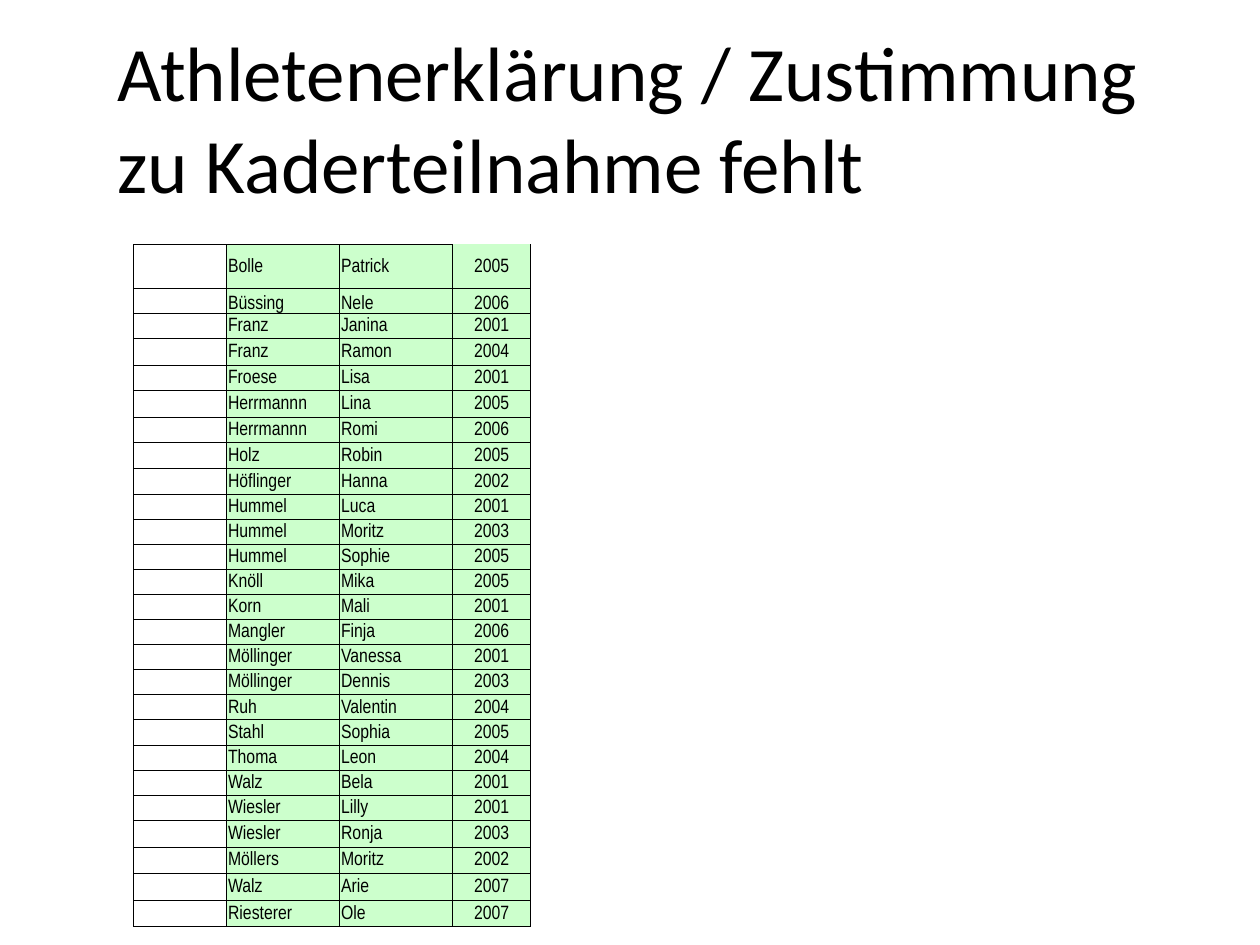
from lxml.etree import SubElement
from pptx import Presentation
from pptx.dml.color import RGBColor
from pptx.enum.text import MSO_ANCHOR, MSO_AUTO_SIZE, PP_ALIGN
from pptx.oxml.ns import qn
from pptx.util import Pt

COLORS = {"text": "000000", "border": "000000", "cell": "CCFFCC"}
ATHLETES = [
    ("Bolle", "Patrick", 2005), ("Büssing", "Nele", 2006),
    ("Franz", "Janina", 2001), ("Franz", "Ramon", 2004),
    ("Froese", "Lisa", 2001), ("Herrmannn", "Lina", 2005),
    ("Herrmannn", "Romi", 2006), ("Holz", "Robin", 2005),
    ("Höflinger", "Hanna", 2002), ("Hummel", "Luca", 2001),
    ("Hummel", "Moritz", 2003), ("Hummel", "Sophie", 2005),
    ("Knöll", "Mika", 2005), ("Korn", "Mali", 2001),
    ("Mangler", "Finja", 2006), ("Möllinger", "Vanessa", 2001),
    ("Möllinger", "Dennis", 2003), ("Ruh", "Valentin", 2004),
    ("Stahl", "Sophia", 2005), ("Thoma", "Leon", 2004),
    ("Walz", "Bela", 2001), ("Wiesler", "Lilly", 2001),
    ("Wiesler", "Ronja", 2003), ("Möllers", "Moritz", 2002),
    ("Walz", "Arie", 2007), ("Riesterer", "Ole", 2007),
]
COL_WIDTHS = [53.2, 64.6, 64.6, 44.5]
TALL_ROWS = {3, 5, 7, 22, 23, 24, 25}
ROW_HEIGHTS = [25.2] + [15.25 if i in TALL_ROWS else 13.4
                        for i in range(1, len(ATHLETES))]


def set_font(p, name, size):
    p.font.name = name
    p.font.size = Pt(size)
    p.font.color.rgb = RGBColor.from_string(COLORS["text"])


def set_borders(cell, hidden=()):
    tcPr = cell._tc.get_or_add_tcPr()
    for i, side in enumerate(("lnL", "lnR", "lnT", "lnB")):
        ln = tcPr.makeelement(qn(f"a:{side}"), {"w": str(Pt(0.5))})
        tcPr.insert(i, ln)
        if side in hidden:
            SubElement(ln, qn("a:noFill"))
        else:
            fill = SubElement(ln, qn("a:solidFill"))
            SubElement(fill, qn("a:srgbClr"), val=COLORS["border"])


prs = Presentation()
prs.slide_width, prs.slide_height = Pt(720), Pt(540)
s = prs.slides.add_slide(prs.slide_layouts[5])

# Title
title = s.shapes.title
title.left, title.top, title.width, title.height = Pt(60), Pt(21.6), Pt(636), Pt(90)
tf = title.text_frame
tf.text = "Athletenerklärung / Zustimmung zu Kaderteilnahme fehlt"
tf.auto_size = MSO_AUTO_SIZE.NONE
tf.vertical_anchor = MSO_ANCHOR.MIDDLE
p = tf.paragraphs[0]
p.alignment = PP_ALIGN.LEFT
set_font(p, "Calibri", 44)

# Table of athletes, with an empty first column
table = s.shapes.add_table(len(ATHLETES), len(COL_WIDTHS), Pt(76.4), Pt(139.7),
                           Pt(sum(COL_WIDTHS)), Pt(sum(ROW_HEIGHTS))).table
table.first_row = table.horz_banding = False
for col, width in zip(table.columns, COL_WIDTHS):
    col.width = Pt(width)
for row, height in zip(table.rows, ROW_HEIGHTS):
    row.height = Pt(height)

for i, athlete in enumerate(ATHLETES):
    for j, value in enumerate(("", *athlete)):
        cell = table.cell(i, j)
        cell.text = str(value)
        cell.margin_left = cell.margin_right = cell.margin_top = Pt(0.75)
        cell.margin_bottom = 0
        cell.vertical_anchor = MSO_ANCHOR.BOTTOM if i == 1 else MSO_ANCHOR.MIDDLE
        p = cell.text_frame.paragraphs[0]
        if j == 0:
            cell.fill.background()
            # Small end mark keeps the empty cell from stretching its row
            SubElement(p._p, qn("a:endParaRPr"), sz="1100")
        else:
            cell.fill.solid()
            cell.fill.fore_color.rgb = RGBColor.from_string(COLORS["cell"])
            set_font(p, "Arial Narrow", 11)
        if j == 3:
            p.alignment = PP_ALIGN.CENTER
        set_borders(cell, hidden=("lnT",) if (i, j) == (0, 3) else ())

prs.save("out.pptx")
